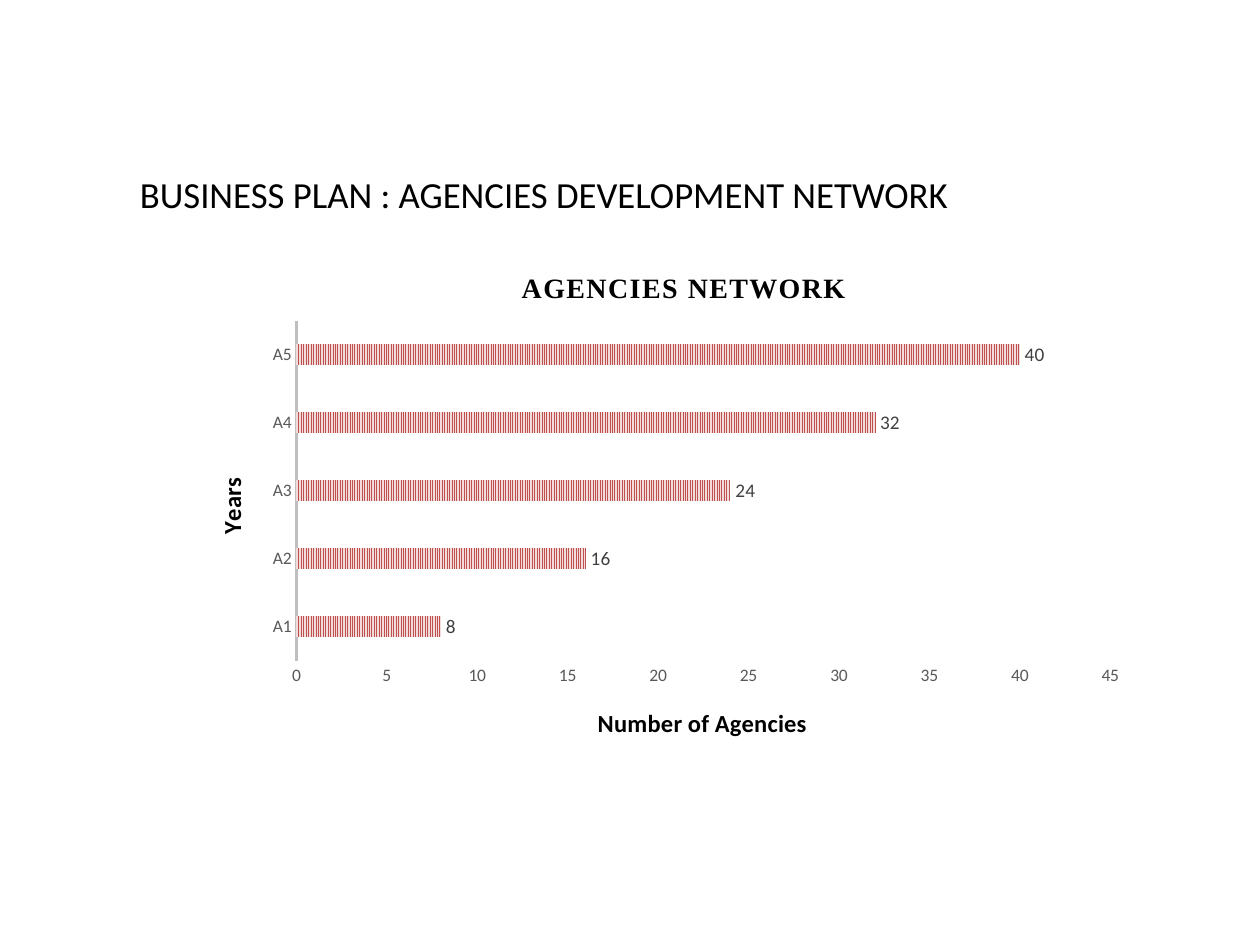
"""Build the agencies development network slide with its bar chart."""
from lxml.etree import SubElement
from pptx import Presentation
from pptx.chart.data import CategoryChartData
from pptx.dml.color import RGBColor
from pptx.enum.chart import XL_CHART_TYPE, XL_LABEL_POSITION, XL_TICK_MARK
from pptx.enum.dml import MSO_PATTERN
from pptx.enum.text import MSO_ANCHOR, PP_ALIGN
from pptx.oxml.ns import qn
from pptx.util import Pt

COLORS = {
    "text": "000000",
    "tick": "595959",
    "label": "404040",
    "axis": "BFBFBF",
    "bar": "C0504D",
    "bar_back": "F2DCDB",
}


def write_text(frame, text, size, font="Calibri", bold=False, align=None, spacing=0):
    paragraph = frame.paragraphs[0]
    paragraph.alignment = align
    run = paragraph.add_run()
    run.text = text
    run.font.size = Pt(size)
    run.font.name = font
    run.font.bold = bold
    run.font.color.rgb = RGBColor.from_string(COLORS["text"])
    if spacing:
        run.font._element.set("spc", str(spacing))


def place(element, index, **values):
    for old_layout in element.findall(qn("c:layout")):
        element.remove(old_layout)
    layout = SubElement(element, qn("c:layout"))
    manual = SubElement(layout, qn("c:manualLayout"))
    for name, value in values.items():
        SubElement(manual, qn(f"c:{name}")).set("val", str(value))
    element.insert(index, layout)


presentation = Presentation()
presentation.slide_width = Pt(720)
presentation.slide_height = Pt(540)
slide = presentation.slides.add_slide(presentation.slide_layouts[5])

title = slide.shapes.title
title.left, title.top, title.width, title.height = Pt(72.7), Pt(86.4), Pt(659.5), Pt(49)
title.text_frame.vertical_anchor = MSO_ANCHOR.MIDDLE
write_text(title.text_frame, "BUSINESS PLAN : AGENCIES DEVELOPMENT NETWORK", 21,
           align=PP_ALIGN.JUSTIFY)

chart_data = CategoryChartData()
chart_data.categories = ["A1", "A2", "A3", "A4", "A5"]
chart_data.add_series("Series 1", [8, 16, 24, 32, 40])
chart = slide.shapes.add_chart(XL_CHART_TYPE.BAR_CLUSTERED, Pt(103.7), Pt(142.6),
                               Pt(547.2), Pt(290.2), chart_data).chart
chart.has_legend = False
chart.font.name = "Calibri"
chart.font.size = Pt(10)
chart.font.color.rgb = RGBColor.from_string(COLORS["text"])

years, agencies = chart.category_axis, chart.value_axis
for axis in (years, agencies):
    axis.has_major_gridlines = False
    axis.major_tick_mark = XL_TICK_MARK.NONE
    axis.minor_tick_mark = XL_TICK_MARK.NONE
    axis.tick_labels.font.name = "Calibri"
    axis.tick_labels.font.size = Pt(10)
    axis.tick_labels.font.color.rgb = RGBColor.from_string(COLORS["tick"])
years.format.line.color.rgb = RGBColor.from_string(COLORS["axis"])
years.format.line.width = Pt(1.5)
agencies.format.line.fill.background()
agencies.minimum_scale, agencies.maximum_scale, agencies.major_unit = 0, 45, 5

write_text(chart.chart_title.text_frame, "AGENCIES NETWORK", 16,
           font="Times New Roman", bold=True, spacing=100)
write_text(years.axis_title.text_frame, "Years", 14, bold=True)
write_text(agencies.axis_title.text_frame, "Number of Agencies", 14, bold=True)
years.axis_title.text_frame._txBody.bodyPr.set("rot", "-5400000")
years.axis_title.text_frame._txBody.bodyPr.set("vert", "horz")

for chart_title, x, y in (
    (chart.chart_title, 0.35, 0.03),
    (years.axis_title, 0.03, 0.44),
    (agencies.axis_title, 0.43, 0.89),
):
    place(chart_title._element, 1, xMode="edge", yMode="edge", x=x, y=y)
place(chart._chartSpace.chart.plotArea, 0, layoutTarget="inner",
      xMode="edge", yMode="edge", x=0.12, y=0.14, w=0.85, h=0.67)

plot = chart.plots[0]
plot.gap_width = 227
plot.overlap = -48
plot.vary_by_categories = False
fill = plot.series[0].format.fill
fill.patterned()
fill.pattern = MSO_PATTERN.NARROW_VERTICAL
fill.fore_color.rgb = RGBColor.from_string(COLORS["bar"])
fill.back_color.rgb = RGBColor.from_string(COLORS["bar_back"])

plot.has_data_labels = True
labels = plot.data_labels
labels.show_value = True
labels.position = XL_LABEL_POSITION.OUTSIDE_END
labels.font.name = "Calibri"
labels.font.size = Pt(11)
labels.font.color.rgb = RGBColor.from_string(COLORS["label"])

presentation.save("out.pptx")
